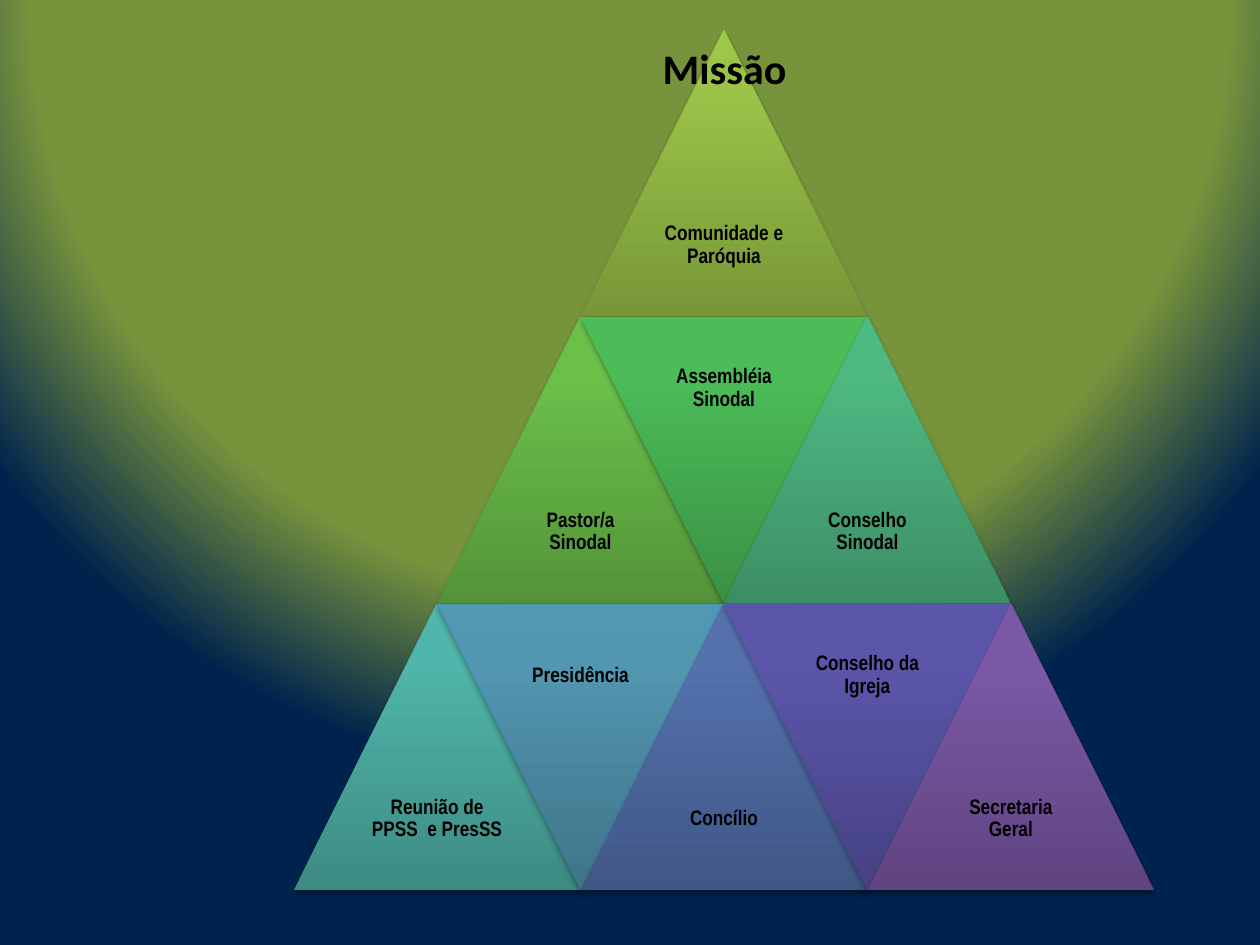
import lxml.etree
import pptx
import pptx.dml.color
import pptx.enum.shapes
import pptx.enum.text
import pptx.oxml
import pptx.oxml.ns
import pptx.util

Cm = pptx.util.Cm
Pt = pptx.util.Pt
RGBColor = pptx.dml.color.RGBColor
qn = pptx.oxml.ns.qn
NS = pptx.oxml.ns.nsdecls("a")

BLACK = RGBColor(0x00, 0x00, 0x00)
OLIVE = RGBColor(0x77, 0x93, 0x3C)
NAVY = RGBColor(0x00, 0x23, 0x4D)

LINEAR_UP = '<a:lin ang="16200000" scaled="0"/>'
CIRCLE_FROM_TOP = ('<a:path path="circle">'
                   '<a:fillToRect l="50000" t="-80000" r="50000" b="180000"/></a:path>')


def shades(dark, middle, light):
    return [(0, RGBColor.from_string(dark)), (80, RGBColor.from_string(middle)),
            (100, RGBColor.from_string(light))]


ROWS = [
    [("Comunidade e Paróquia", shades("779737", "9BC348", "9DC746"))],
    [("Pastor/a Sinodal", shades("539439", "6BC04A", "6BC348")),
     ("Assembléia Sinodal", shades("3A9144", "4CBC58", "4ABF57")),
     ("Conselho Sinodal", shades("3C8E65", "4EB983", "4CBC84"))],
    [("Reunião de PPSS  e PresSS", shades("3D8B83", "50B5AA", "4EB8AC")),
     ("Presidência", shades("3F7489", "5297B1", "5098B4")),
     ("Concílio", shades("405786", "5471AE", "5271B0")),
     ("Conselho da Igreja", shades("464283", "5B56AA", "5A55AC")),
     ("Secretaria Geral", shades("5F4480", "7B58A6", "7C57A8"))],
]


def set_gradient(fill, parent, stops, direction):
    fill.solid()
    stop_xml = "".join(
        f'<a:gs pos="{pos * 1000}"><a:srgbClr val="{color}"/></a:gs>' for pos, color in stops)
    gradient = pptx.oxml.parse_xml(
        f'<a:gradFill {NS} rotWithShape="0"><a:gsLst>{stop_xml}</a:gsLst>{direction}</a:gradFill>')
    parent.replace(parent.find(qn("a:solidFill")), gradient)


def set_shadow(shape):
    shape.shadow.inherit = False
    effects = shape.element.spPr.find(qn("a:effectLst"))
    effects.append(pptx.oxml.parse_xml(
        f'<a:outerShdw {NS} blurRad="40000" dist="23000" dir="5400000" rotWithShape="0">'
        '<a:srgbClr val="000000"><a:alpha val="35000"/></a:srgbClr></a:outerShdw>'))


def add_run(p, text, font, size):
    r = p.add_run()
    r.text = text
    r.font.name = font
    r.font.size = Pt(size)
    r.font.bold = True
    r.font.color.rgb = BLACK


def add_label(shapes, left, top, side, text):
    tf = shapes.add_textbox(left, top, side, side).text_frame
    tf.word_wrap = True
    tf.vertical_anchor = pptx.enum.text.MSO_ANCHOR.MIDDLE
    tf.margin_left = tf.margin_right = tf.margin_top = tf.margin_bottom = Cm(0.13)
    p = tf.paragraphs[0]
    p.alignment = pptx.enum.text.PP_ALIGN.CENTER
    p.line_spacing = 0.9
    p.space_after = Pt(4.2)
    add_run(p, text, "Arial Narrow", 12)


def add_triangle(shapes, left, top, side, text, stops, inverted):
    sp = shapes.add_shape(
        pptx.enum.shapes.MSO_SHAPE.ISOSCELES_TRIANGLE, left, top, side, side)
    sp.rotation = 180 if inverted else 0
    set_gradient(sp.fill, sp.element.spPr, stops, LINEAR_UP)
    sp.line.fill.background()
    set_shadow(sp)
    half = side // 2
    label_top = top if inverted else top + half
    add_label(shapes, left + half // 2, label_top, half, text)


def add_pyramid(s, left, top, size):
    shapes = s.shapes.add_group_shape().shapes
    side = size // len(ROWS)
    for i, row in enumerate(ROWS):
        row_left = left + (len(ROWS) - 1 - i) * side // 2
        for j, (text, stops) in enumerate(row):
            add_triangle(shapes, row_left + j * side // 2, top + i * side,
                         side, text, stops, j % 2 == 1)


def add_title(s, left, top, width, height):
    tf = s.shapes.add_textbox(left, top, width, height).text_frame
    tf.word_wrap = False
    tf.auto_size = pptx.enum.text.MSO_AUTO_SIZE.SHAPE_TO_FIT_TEXT
    add_run(tf.paragraphs[0], "Missão", "Calibri", 24)


def set_background(s):
    fill = s.background.fill
    fill.solid()
    set_gradient(fill, s.element.find(".//" + qn("p:bgPr")),
                 [(0, OLIVE), (53, OLIVE), (76, OLIVE), (100, NAVY)], CIRCLE_FROM_TOP)


def main():
    prs = pptx.Presentation()
    prs.slide_width = Cm(25.4)
    prs.slide_height = Cm(19.05)
    s = prs.slides.add_slide(prs.slide_layouts[6])
    set_background(s)
    add_pyramid(s, Cm(5.92), Cm(0.6), Cm(17.35))
    add_title(s, Cm(13.11), Cm(0.74), Cm(3.23), Cm(1.27))
    prs.save("out.pptx")


if __name__ == "__main__":
    main()
